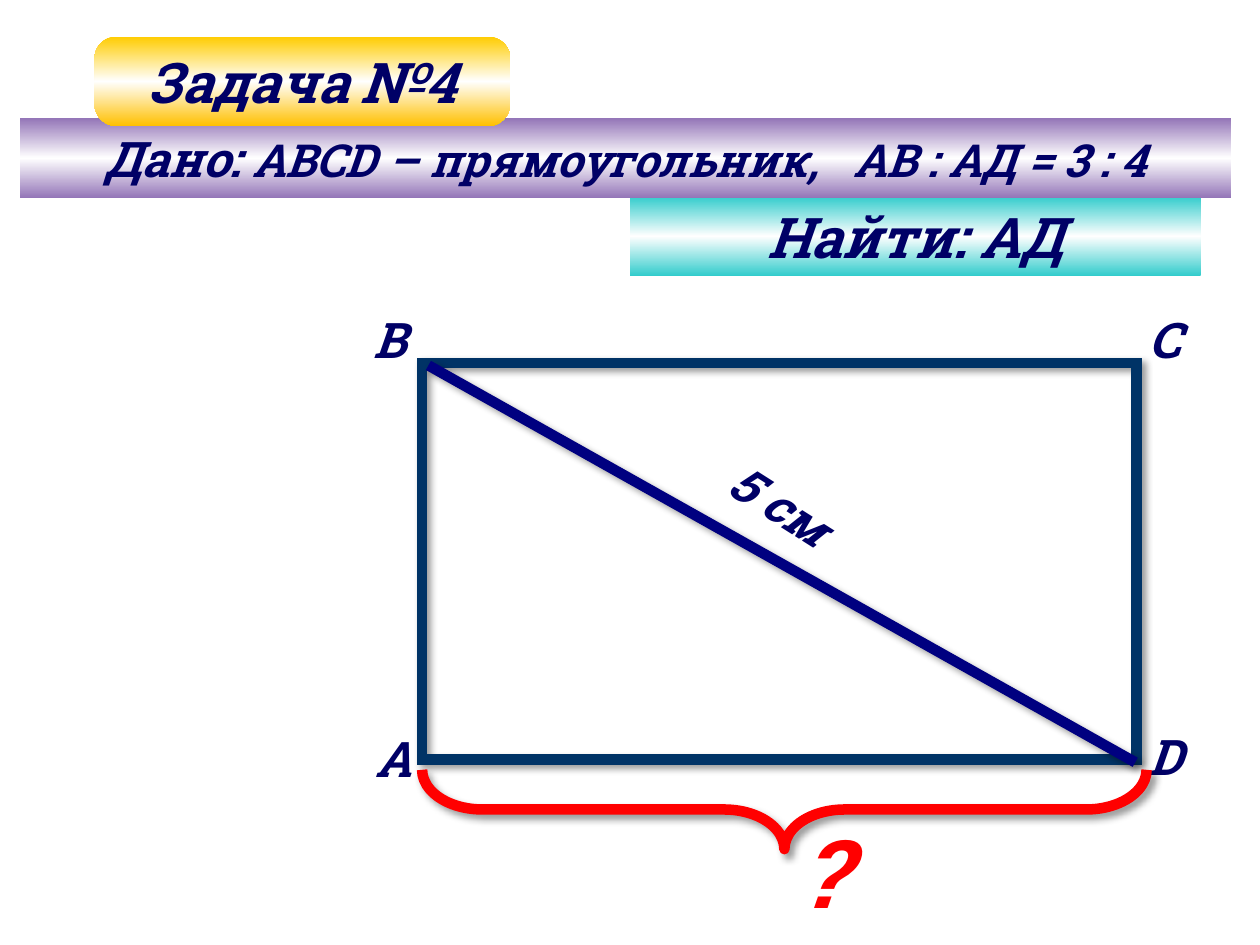
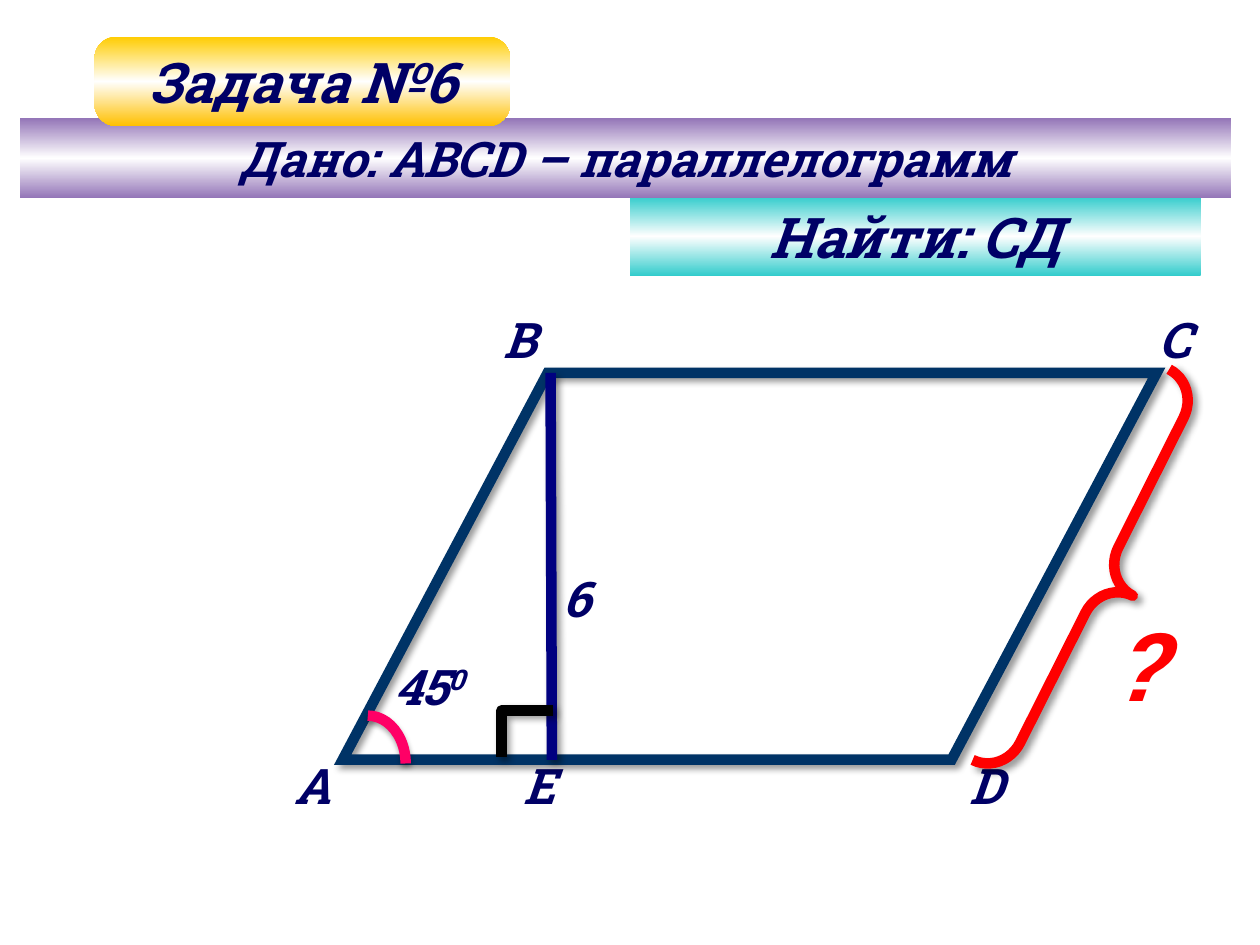
from lxml.etree import SubElement
from copy import deepcopy
from pptx import Presentation
from pptx.dml.color import RGBColor
from pptx.enum.shapes import MSO_CONNECTOR, MSO_SHAPE
from pptx.enum.text import MSO_ANCHOR, PP_ALIGN
from pptx.oxml.ns import qn
from pptx.util import Pt

PX = 9144  # 100 px to the inch
FONT = "Roboto Slab"
INK = RGBColor(0x00, 0x00, 0x66)
EDGE = RGBColor(0x00, 0x33, 0x66)
NAVY = RGBColor(0x00, 0x00, 0x80)
RED = RGBColor(0xFF, 0x00, 0x00)
PINK = RGBColor(0xFF, 0x00, 0x66)
BLACK = RGBColor(0x00, 0x00, 0x00)
WHITE = RGBColor(0xFF, 0xFF, 0xFF)
GOLD = RGBColor(0xFF, 0xCC, 0x00)
AMBER = RGBColor(0xFF, 0xC0, 0x00)
TEAL = RGBColor(0x33, 0xCC, 0xCC)
LILAC = RGBColor(0x94, 0x76, 0xB8)


def px(*sizes):
    return [size * PX for size in sizes]


def style(run, size, color=INK):
    font = run.font
    font.name, font.size = FONT, Pt(size)
    font.bold = font.italic = True
    font.color.rgb = color


def label(slide, text, x, y, w=50, h=57, size=28, color=INK, turn=0):
    box = slide.shapes.add_textbox(*px(x, y, w, h))
    box.rotation = turn
    frame = box.text_frame
    frame.word_wrap = False
    frame.text = text
    style(frame.paragraphs[0].runs[0], size, color)
    return frame.paragraphs[0]


def query(slide, x, y):
    label(slide, "?", x, y, 67, 101, 54, RED)


def stroke(shape, color, blur=4, dist=3, angle=45, alpha=40):
    """Draw a thick line with a soft shadow; lengths are in points."""
    shape.line.color.rgb = color
    shape.line.width = Pt(6)
    effects = SubElement(shape._element.spPr, qn("a:effectLst"))
    shadow = SubElement(effects, qn("a:outerShdw"), blurRad=str(Pt(blur)),
                        dist=str(Pt(dist)), dir=str(angle * 60000),
                        algn="tl", rotWithShape="0")
    tint = SubElement(shadow, qn("a:srgbClr"), val="000000")
    SubElement(tint, qn("a:alpha"), val=str(alpha * 1000))


def outline(slide, kind, box, color, adjust=(), turn=0, **shade):
    shape = slide.shapes.add_shape(kind, *px(*box))
    shape.rotation = turn
    for i, value in enumerate(adjust):
        shape.adjustments[i] = value
    shape.fill.background()
    stroke(shape, color, **shade)
    return shape


def miter(shape):
    SubElement(shape.line._get_or_add_ln(), qn("a:miter"), lim="800000")


def segment(slide, *ends):
    line = slide.shapes.add_connector(MSO_CONNECTOR.STRAIGHT, *px(*ends))
    stroke(line, NAVY)


def band(slide, kind, box, colors, runs):
    """Add a gradient band; runs hold text, size and letter spacing."""
    shape = slide.shapes.add_shape(kind, *px(*box))
    shape.shadow.inherit = False
    shape.line.fill.background()
    shape.fill.gradient()
    stops = shape._element.spPr.find(qn("a:gradFill")).find(qn("a:gsLst"))
    stops.append(deepcopy(stops[0]))
    for i, (stop, color) in enumerate(zip(shape.fill.gradient_stops, colors)):
        stop.position = i / 2
        stop.color.rgb = color
    shape.fill.gradient_angle = 270
    frame = shape.text_frame
    frame.word_wrap = False
    frame.vertical_anchor = MSO_ANCHOR.MIDDLE
    para = frame.paragraphs[0]
    para.alignment = PP_ALIGN.CENTER
    for text, size, gap in runs:
        run = para.add_run()
        run.text = text
        style(run, size)
        if gap:
            run._r.get_or_add_rPr().set("spc", str(gap))
    return shape


def header(slide, x, y, number, given, goal):
    band(slide, MSO_SHAPE.RECTANGLE, (x + 484, y + 127, 453, 63),
         (TEAL, WHITE, TEAL), [(f"Найти: {goal}", 32, 0)])
    band(slide, MSO_SHAPE.RECTANGLE, (x, y + 65, 961, 63),
         (LILAC, WHITE, LILAC), given)
    title = band(slide, MSO_SHAPE.ROUNDED_RECTANGLE, (x + 59, y, 330, 71),
                 (GOLD, WHITE, AMBER), [(f"Задача №{number}", 32, 0)])
    title.adjustments[0] = 0.25


def oblong(slide, x, y, w, h):
    """Rectangle with its diagonal and the unknown base."""
    for name, left, top in (("А", x - 47, y + h - 30), ("B", x - 48, y - 47),
                            ("C", x + w, y - 47), ("D", x + w, y + h - 31)):
        label(slide, name, left, top)
    miter(outline(slide, MSO_SHAPE.RECTANGLE, (x, y, w, h), EDGE))
    segment(slide, x + w - 1, y + h + 2, x + 5, y + 2)
    label(slide, "5 см", x + 232, y + 87, 116, turn=32.4)
    outline(slide, MSO_SHAPE.RIGHT_BRACE, (x + 256, y + 67, 63, 575), RED,
            (0.76, 0.5), 90)
    query(slide, x + 290, y + 353)


def slanted(slide, x, y, w, h):
    """Parallelogram with its height, angle and the unknown side."""
    foot, base = x + 166, y + h
    for name, left, top in (("А", x - 48, base - 8), ("B", x + 118, y - 55),
                            ("C", x + w - 8, y - 55),
                            ("D", x + 488, base - 8), ("Е", x + 134, base - 8)):
        label(slide, name, left, top, 46)
    miter(outline(slide, MSO_SHAPE.PARALLELOGRAM, (x, y, w, h), EDGE, (0.53,)))
    segment(slide, foot, base, foot - 1, y)

    pen = slide.shapes.build_freeform(*px(foot + 1, base - 39))
    pen.add_line_segments([px(foot - 40, base - 39), px(foot - 40, base - 2)],
                          close=False)
    corner = pen.convert_to_shape()
    corner.fill.background()
    stroke(corner, BLACK)

    outline(slide, MSO_SHAPE.ARC, (x - 10, base - 35, 60, 76), PINK,
            blur=3.1, dist=1.8, angle=90, alpha=35)
    para = label(slide, "45", x + 31, base - 87, 91)
    power = para.add_run()
    power.text = "0"
    style(power, 28)
    power._r.get_or_add_rPr().set("baseline", "30000")
    label(slide, "6", foot - 1, y + 150, 47)
    outline(slide, MSO_SHAPE.RIGHT_BRACE, (x + 575, y - 9, 55, 347), RED,
            (0.53, 0.5), 26.7)
    query(slide, x + 603, y + 181)


def main():
    deck = Presentation()
    deck.slide_width, deck.slide_height = px(1000, 750)
    blank = deck.slide_layouts[6]

    slide = deck.slides.add_slide(blank)
    oblong(slide, 335, 288, 567, 315)
    header(slide, 16, 29, 4,
           [("Дано: ", 28, 0), ("АВСD – прямоугольник,", 26, 0),
            (" ", 26, 1300), ("АВ : АД = 3 : 4", 26, 0)], "АД")

    slide = deck.slides.add_slide(blank)
    slanted(slide, 272, 296, 646, 307)
    header(slide, 16, 29, 6, [("Дано: АВСD – параллелограмм", 28, 0)], "СД")

    deck.save("out.pptx")


if __name__ == "__main__":
    main()
